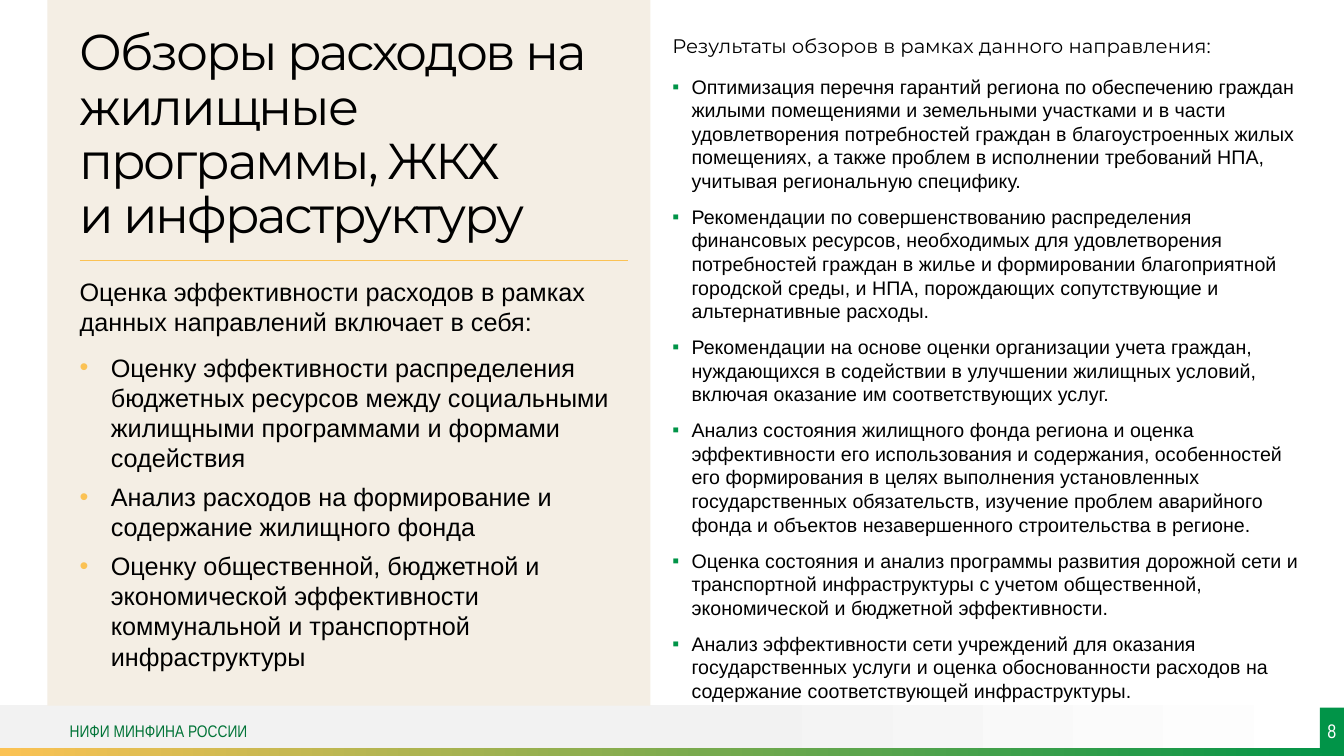
from dataclasses import dataclass

from lxml import etree
from pptx import Presentation
from pptx.dml.color import RGBColor
from pptx.enum.shapes import MSO_CONNECTOR, MSO_SHAPE
from pptx.enum.text import MSO_ANCHOR, MSO_AUTO_SIZE, PP_ALIGN
from pptx.oxml.ns import qn
from pptx.util import Inches, Pt

RECT = MSO_SHAPE.RECTANGLE
STRAIGHT = MSO_CONNECTOR.STRAIGHT
TOP, MIDDLE, BOTTOM = MSO_ANCHOR.TOP, MSO_ANCHOR.MIDDLE, MSO_ANCHOR.BOTTOM
LEFT, CENTER = PP_ALIGN.LEFT, PP_ALIGN.CENTER
NO_FIT = MSO_AUTO_SIZE.NONE


@dataclass(frozen=True)
class Theme:
    ink: str = "000000"
    white: str = "FFFFFF"
    gray: str = "F2F2F2"
    sand: str = "F4EEE4"
    gold: str = "FBC254"
    green: str = "019448"
    dark: str = "027438"
    head: str = "Montserrat"
    body: str = "Arial"
    slim: str = "Arial Narrow"
    title: int = 36
    large: int = 18
    small: int = 14
    foot: int = 12


THEME = Theme()


@dataclass(frozen=True)
class Box:
    left: float
    top: float
    width: float
    height: float

    def lengths(self):
        return [Inches(n) for n in (self.left, self.top, self.width, self.height)]


@dataclass(frozen=True)
class Style:
    font: str
    size: int
    color: str = THEME.ink
    before: float = 0
    after: float = 0
    line: float = 1.0
    align: PP_ALIGN = LEFT
    mark: str = ""
    tint: str = ""
    indent: float = 0


@dataclass(frozen=True)
class Band:
    box: Box
    stops: tuple


@dataclass(frozen=True)
class Column:
    box: Box
    inset: tuple
    intro: str
    lead: Style
    items: tuple
    point: Style


BANDS = (
    Band(Box(0, 6.99, 13.33, 0.46), ((0.53, THEME.gray), (1, THEME.white))),
    Band(Box(0, 7.42, 13.33, 0.08), ((0, THEME.gold), (1, THEME.green))),
    Band(Box(0.47, 0, 5.98, 7), ((0, THEME.sand),)),
)
TITLE = "Обзоры расходов на жилищные программы, ЖКХ \vи инфраструктуру"
COLUMNS = (
    Column(
        Box(0.79, 2.74, 5.6, 4.46), (0, 0),
        "Оценка эффективности расходов в рамках данных направлений включает в себя:",
        Style(THEME.body, THEME.large, after=5),
        (
            "Оценку эффективности распределения бюджетных ресурсов между социальными жилищными программами и формами содействия",
            "Анализ расходов на формирование и содержание жилищного фонда",
            "Оценку общественной, бюджетной и экономической эффективности коммунальной и транспортной инфраструктуры",
        ),
        Style(THEME.body, THEME.large, before=6,
              mark="•", tint=THEME.gold, indent=0.31),
    ),
    Column(
        Box(6.57, 0.29, 6.52, 6.7), (0.1, 0.05),
        "Результаты обзоров в рамках данного направления:",
        Style(THEME.head, THEME.small, after=6),
        (
            "Оптимизация перечня гарантий региона по обеспечению граждан жилыми помещениями и земельными участками и в части удовлетворения потребностей граждан в благоустроенных жилых помещениях, а также проблем в исполнении требований НПА, учитывая региональную специфику.",
            "Рекомендации по совершенствованию распределения финансовых ресурсов, необходимых для удовлетворения потребностей граждан в жилье и формировании благоприятной городской среды, и НПА, порождающих сопутствующие и альтернативные расходы.",
            "Рекомендации на основе оценки организации учета граждан, нуждающихся в содействии в улучшении жилищных условий, включая оказание им соответствующих услуг.",
            "Анализ состояния жилищного фонда региона и оценка эффективности его использования и содержания, особенностей его формирования в целях выполнения установленных государственных обязательств, изучение проблем аварийного фонда и объектов незавершенного строительства в регионе.",
            "Оценка состояния и анализ программы развития дорожной сети и транспортной инфраструктуры с учетом общественной, экономической и бюджетной эффективности.",
            "Анализ эффективности сети учреждений для оказания государственных услуги и оценка обоснованности расходов на содержание соответствующей инфраструктуры.",
        ),
        Style(THEME.body, THEME.small, before=6, after=3,
              mark="▪", tint=THEME.green, indent=0.19),
    ),
)


def rgb(color: str) -> RGBColor:
    return RGBColor.from_string(color)


def add_band(slide, band: Band):
    """Draw a borderless bar, solid for one stop and graded for two."""
    shape = slide.shapes.add_shape(RECT, *band.box.lengths())
    shape.shadow.inherit = False
    shape.line.fill.background()
    if len(band.stops) == 1:
        shape.fill.solid()
        shape.fill.fore_color.rgb = rgb(band.stops[0][1])
    else:
        shape.fill.gradient()
        shape.fill.gradient_angle = 0
        for stop, (place, color) in zip(shape.fill.gradient_stops, band.stops):
            stop.position = place
            stop.color.rgb = rgb(color)
    return shape


def add_mark(para, style: Style) -> None:
    """Give a paragraph its hanging bullet."""
    props = para._p.get_or_add_pPr()
    props.set("marL", str(Inches(style.indent)))
    props.set("indent", str(-Inches(style.indent)))
    tint = etree.SubElement(props, qn("a:buClr"))
    etree.SubElement(tint, qn("a:srgbClr")).set("val", style.tint)
    etree.SubElement(props, qn("a:buFont")).set("typeface", THEME.body)
    etree.SubElement(props, qn("a:buChar")).set("char", style.mark)


def style_para(para, style: Style) -> None:
    para.alignment = style.align
    para.line_spacing = style.line
    para.space_before = Pt(style.before)
    para.space_after = Pt(style.after)
    if style.mark:
        add_mark(para, style)
    for run in para.runs:
        run.font.name = style.font
        run.font.size = Pt(style.size)
        run.font.color.rgb = rgb(style.color)


def fill_text(shape, lines: list, anchor=TOP, inset: tuple = (0, 0)) -> None:
    """Write (text, style) pairs as the paragraphs of a shape."""
    frame = shape.text_frame
    frame.word_wrap = True
    frame.auto_size = NO_FIT
    frame.vertical_anchor = anchor
    frame.margin_left = frame.margin_right = Inches(inset[0])
    frame.margin_top = frame.margin_bottom = Inches(inset[1])
    frame.text = "\n".join(text for text, _ in lines)
    for para, (_, style) in zip(frame.paragraphs, lines):
        style_para(para, style)


def add_text(slide, box: Box, lines: list, anchor=TOP, inset: tuple = (0, 0)) -> None:
    fill_text(slide.shapes.add_textbox(*box.lengths()), lines, anchor, inset)


def set_title(slide) -> None:
    title = slide.shapes.title
    title.left, title.top, title.width, title.height = Box(0.79, 0.67, 5.44, 1.76).lengths()
    fill_text(title, [(TITLE, Style(THEME.head, THEME.title, line=0.9))], BOTTOM)
    for run in title.text_frame.paragraphs[0].runs:
        run.font._element.set("spc", "-150")
    title.element.getparent().append(title.element)  # above the sand panel


def add_rule(slide) -> None:
    rule = slide.shapes.add_connector(
        STRAIGHT, Inches(0.79), Inches(2.58), Inches(6.23), Inches(2.58))
    rule.line.color.rgb = rgb(THEME.gold)
    rule.line.width = Pt(0.5)
    etree.SubElement(rule.element.spPr, qn("a:effectLst"))


def main() -> None:
    deck = Presentation()
    deck.slide_width, deck.slide_height = Inches(13.33), Inches(7.5)
    slide = deck.slides.add_slide(deck.slide_layouts[5])
    for band in BANDS:
        add_band(slide, band)
    set_title(slide)
    add_rule(slide)
    for col in COLUMNS:
        lines = [(col.intro, col.lead)] + [(item, col.point) for item in col.items]
        add_text(slide, col.box, lines, inset=col.inset)
    foot = Style(THEME.slim, THEME.foot, THEME.dark)
    add_text(slide, Box(0.69, 7.02, 4.61, 0.45), [("НИФИ МИНФИНА РОССИИ", foot)], MIDDLE)
    page = add_band(slide, Band(Box(13.09, 7.02, 0.24, 0.45), ((0, THEME.green),)))
    number = Style(THEME.slim, THEME.small, THEME.white, align=CENTER)
    fill_text(page, [("8", number)], MIDDLE)
    deck.save("out.pptx")


if __name__ == "__main__":
    main()
